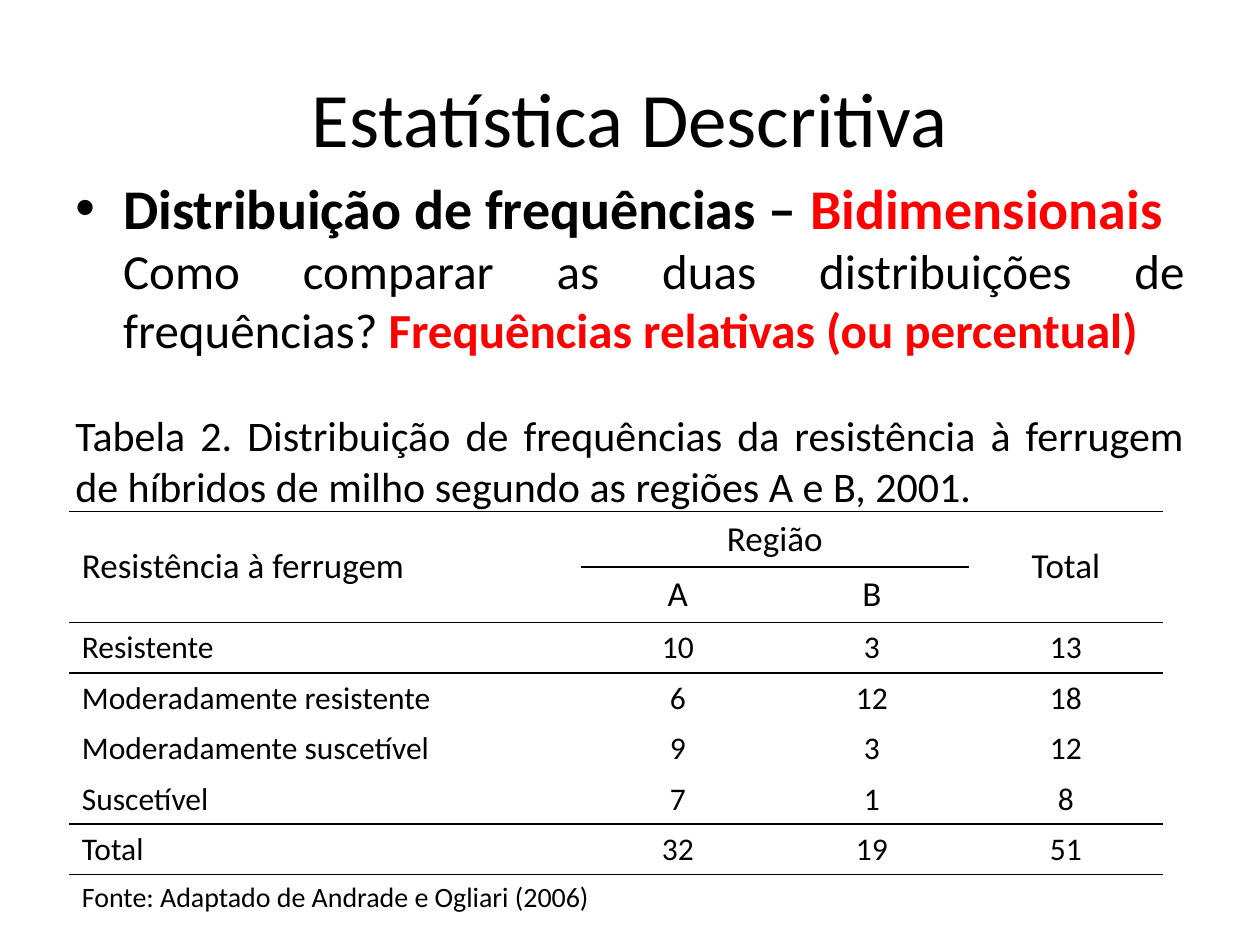
from lxml import etree
from pptx import Presentation
from pptx.dml.color import RGBColor
from pptx.enum.text import MSO_ANCHOR, PP_ALIGN
from pptx.oxml.ns import qn
from pptx.util import Inches, Pt

LEFT, CENTER, JUSTIFY = PP_ALIGN.LEFT, PP_ALIGN.CENTER, PP_ALIGN.JUSTIFY
TOP, MIDDLE = MSO_ANCHOR.TOP, MSO_ANCHOR.MIDDLE
FONT = "Calibri"
BLACK, RED = "000000", "FF0000"
NO_STYLE = "{2D5ABB26-0587-4C30-8999-92F81FD0307C}"


def style_font(font, size, color=BLACK):
    font.name = FONT
    font.size = Pt(size)
    font.color.rgb = RGBColor.from_string(color)


def add_border(cell, tag, position):
    line = etree.Element(qn(tag), w=str(Pt(1)))
    fill = etree.SubElement(line, qn("a:solidFill"))
    etree.SubElement(fill, qn("a:srgbClr"), val=BLACK)
    cell._tc.get_or_add_tcPr().insert(position, line)


presentation = Presentation()
presentation.slide_width = Inches(10)
presentation.slide_height = Inches(7.5)
slide = presentation.slides.add_slide(presentation.slide_layouts[6])

title = slide.shapes.add_textbox(Inches(0.5), Inches(0.3), Inches(9), Inches(1.25))
title.text_frame.word_wrap = True
title.text_frame.vertical_anchor = MIDDLE
paragraph = title.text_frame.paragraphs[0]
paragraph.text = "Estatística Descritiva"
paragraph.alignment = CENTER
style_font(paragraph.font, 44)

body = slide.shapes.add_textbox(Inches(0.5), Inches(1.33), Inches(9), Inches(5.94))
body.text_frame.word_wrap = True
body_paragraphs = [
    (32, LEFT, 0.38, 0, [
        ("Distribuição de frequências – ", BLACK, True),
        ("Bidimensionais", RED, True),
    ]),
    (28, JUSTIFY, 0.38, 0, [
        ("Como comparar as duas distribuições de frequências? ", BLACK, False),
        ("Frequências relativas (ou percentual)", RED, True),
    ]),
    (24, JUSTIFY, 0, 29.3, [
        ("Tabela 2. Distribuição de frequências da resistência à ferrugem "
         "de híbridos de milho segundo as regiões A e B, 2001.", BLACK, False),
    ]),
]
for index, (size, alignment, margin, space, runs) in enumerate(body_paragraphs):
    paragraph = body.text_frame.paragraphs[0] if index == 0 else body.text_frame.add_paragraph()
    paragraph.alignment = alignment
    paragraph.space_before = Pt(space)
    properties = paragraph._p.get_or_add_pPr()
    properties.set("marL", str(Inches(margin)))
    if index == 0:
        properties.set("indent", str(-Inches(margin)))
        etree.SubElement(properties, qn("a:buFont"), typeface="Arial")
        etree.SubElement(properties, qn("a:buChar"), char="•")
    for text, color, bold in runs:
        run = paragraph.add_run()
        run.text = text
        run.font.bold = bold
        style_font(run.font, size, color)

rows = [
    ["Resistência à ferrugem", "Região", "", "Total"],
    ["", "A", "B", ""],
    ["Resistente", "10", "3", "13"],
    ["Moderadamente resistente", "6", "12", "18"],
    ["Moderadamente suscetível", "9", "3", "12"],
    ["Suscetível", "7", "1", "8"],
    ["Total", "32", "19", "51"],
    ["Fonte: Adaptado de Andrade e Ogliari (2006)", "", "", ""],
]
row_sizes = [20, 20, 18, 18, 18, 18, 18, 16]
table = slide.shapes.add_table(
    len(rows), 4, Inches(0.55), Inches(4.06), Inches(8.67), Inches(3.3)).table
table.first_row = False
table.horz_banding = False
table._tbl.tblPr.find(qn("a:tableStyleId")).text = NO_STYLE
for column, width in zip(table.columns, [4.06, 1.54, 1.54, 1.54]):
    column.width = Inches(width)

for row_index, (texts, size) in enumerate(zip(rows, row_sizes)):
    table.rows[row_index].height = Inches(0.44 if row_index < 2 else 0.4)
    for column_index, text in enumerate(texts):
        cell = table.cell(row_index, column_index)
        cell.fill.background()
        cell.vertical_anchor = MIDDLE if row_index == 0 and column_index in (0, 3) else TOP
        paragraph = cell.text_frame.paragraphs[0]
        paragraph.text = text
        paragraph.alignment = CENTER if column_index else LEFT
        style_font(paragraph.font, size)
        inner = column_index in (1, 2)
        if row_index in (0, 2, 6, 7) or (row_index == 1 and inner):
            add_border(cell, "a:lnT", 0)
        if row_index in (1, 5, 6) or (row_index == 0 and inner):
            add_border(cell, "a:lnB", 1 if cell._tc.tcPr.find(qn("a:lnT")) is not None else 0)

for first, last in [((0, 0), (1, 0)), ((0, 1), (0, 2)), ((0, 3), (1, 3)), ((7, 0), (7, 3))]:
    table.cell(*first).merge(table.cell(*last))

presentation.save("out.pptx")
